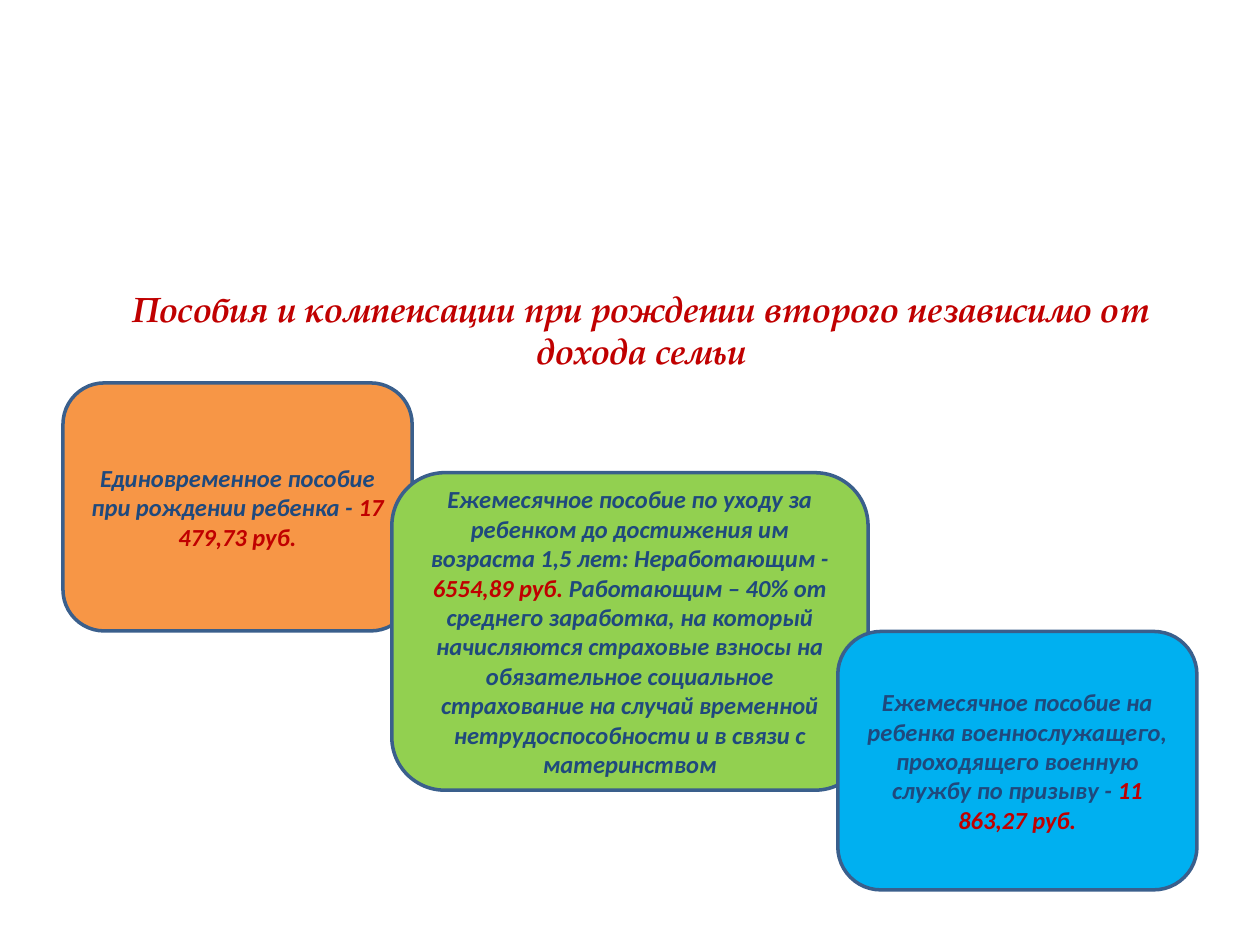
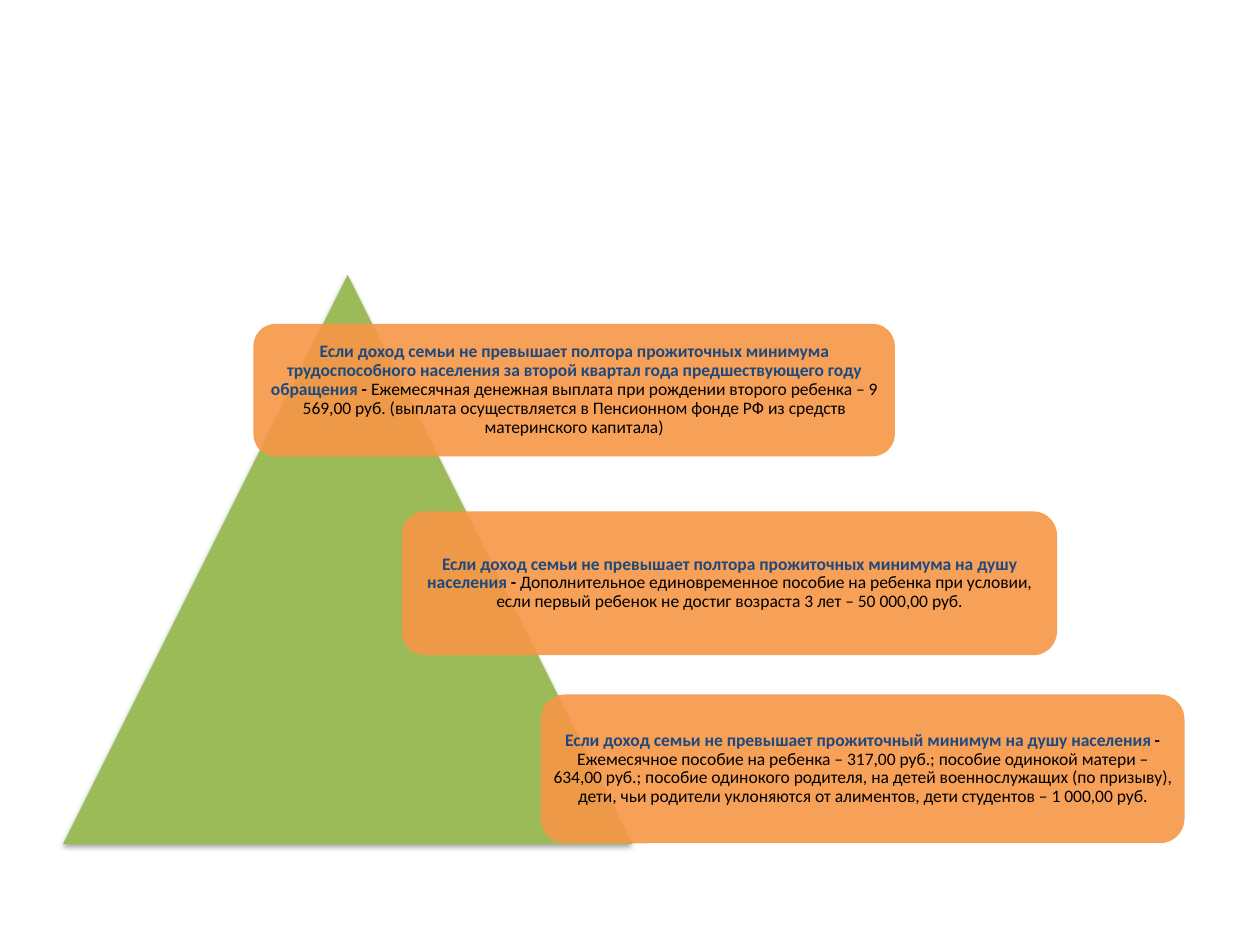
from dataclasses import dataclass

from lxml import etree
from pptx import Presentation
from pptx.dml.color import RGBColor
from pptx.enum.shapes import MSO_SHAPE
from pptx.enum.text import MSO_ANCHOR, PP_ALIGN
from pptx.oxml.ns import qn
from pptx.util import Cm, Pt

ROUND = MSO_SHAPE.ROUNDED_RECTANGLE
PEAK = MSO_SHAPE.ISOSCELES_TRIANGLE
MID = MSO_ANCHOR.MIDDLE
CENTER = PP_ALIGN.CENTER


@dataclass(frozen=True)
class Theme:
    navy: str = "1F497D"
    red: str = "C00000"
    black: str = "000000"
    edge: str = "3A5F8C"
    orange: str = "F79646"
    lime: str = "92D050"
    sky: str = "00B0F0"
    olive: str = "9BBB59"
    head: str = "TeX Gyre Pagella"
    body: str = "Calibri"
    title: int = 20
    box: int = 14
    card: int = 10


T = Theme()

# Content: places are left, top, width, height in cm
TITLE = "Пособия и компенсации при рождении второго независимо от дохода семьи"
TITLE_AT = (1.5, 5.54, 22.86, 2.21)

# Text parts alternate between label and sum
BOXES = [
    ((1.27, 7.72, 7.04, 5), T.orange, [
        "Единовременное пособие при рождении ребенка - ",
        "17 479,73 руб."]),
    ((7.9, 9.53, 9.6, 6.4), T.lime, [
        "Ежемесячное пособие по уходу за ребенком до достижения им "
        "возраста 1,5 лет: Неработающим - ",
        "6554,89 руб. ",
        "Работающим – 40% от среднего заработка, на который начисляются "
        "страховые взносы на обязательное социальное страхование на случай "
        "временной нетрудоспособности и в связи с материнством"]),
    ((16.89, 12.73, 7.24, 5.21), T.sky, [
        "Ежемесячное пособие на ребенка военнослужащего, проходящего "
        "военную службу по призыву - ",
        "11 863,27 руб."]),
]

PEAK_AT = (1.27, 5.54, 11.48, 11.48)

# Each card: place, income rule, benefit
CARDS = [
    ((5.11, 6.53, 12.93, 2.67),
     "Если доход семьи не превышает полтора прожиточных минимума "
     "трудоспособного населения за второй квартал года предшествующего "
     "году обращения",
     "Ежемесячная денежная выплата при рождении второго ребенка – "
     "9 569,00 руб. (выплата осуществляется в Пенсионном фонде РФ из "
     "средств материнского капитала)"),
    ((8.1, 10.31, 13.21, 2.9),
     "Если доход семьи не превышает полтора прожиточных минимума на душу "
     "населения",
     "Дополнительное единовременное пособие на ребенка при условии, если "
     "первый ребенок не достиг возраста 3 лет – 50 000,00 руб."),
    ((10.9, 14, 12.98, 3),
     "Если доход семьи не превышает прожиточный минимум на душу населения",
     "Ежемесячное пособие на ребенка – 317,00 руб.; пособие одинокой "
     "матери – 634,00 руб.; пособие одинокого родителя, на детей "
     "военнослужащих (по призыву), дети, чьи родители уклоняются от "
     "алиментов, дети студентов – 1 000,00 руб."),
]


# Helpers
def rgb(code):
    return RGBColor.from_string(code)


def add_block(slide, kind, at, fill, edge=None):
    shape = slide.shapes.add_shape(kind, *map(Cm, at))
    shape.shadow.inherit = False
    shape.fill.solid()
    shape.fill.fore_color.rgb = rgb(fill)
    if edge:
        shape.line.color.rgb = rgb(edge)
        shape.line.width = Pt(2)
    else:
        shape.line.fill.background()
    return shape


def write(shape, parts, size, face=T.body, slant=False):
    """Fill a shape with one centred paragraph of (text, colour, bold) runs."""
    frame = shape.text_frame
    frame.word_wrap = True
    frame.vertical_anchor = MID
    para = frame.paragraphs[0]
    para.alignment = CENTER
    for text, color, bold in parts:
        run = para.add_run()
        run.text = text
        font = run.font
        font.name, font.size = face, Pt(size)
        font.bold, font.italic = bold, slant
        font.color.rgb = rgb(color)
    return frame


def set_alpha(color, share):
    etree.SubElement(color, qn("a:alpha"), val=str(share * 1000))


def fade(shape, share):
    set_alpha(shape.element.spPr.find(".//" + qn("a:srgbClr")), share)


def cast(shape):
    """Give the shape a soft shadow straight below it."""
    effects = shape.element.spPr.find(qn("a:effectLst"))
    shade = etree.SubElement(
        effects, qn("a:outerShdw"), blurRad=str(Pt(3.1)), dist=str(Pt(1.8)),
        dir=str(90 * 60000), rotWithShape="0")
    set_alpha(etree.SubElement(shade, qn("a:srgbClr"), val=T.black), 35)


# Slides
def draw_boxes(slide):
    title = slide.shapes.add_textbox(*map(Cm, TITLE_AT))
    write(title, [(TITLE, T.red, True)], T.title, T.head, slant=True)
    for at, fill, texts in BOXES:
        box = add_block(slide, ROUND, at, fill, T.edge)
        parts = [(text, (T.navy, T.red)[i % 2], True)
                 for i, text in enumerate(texts)]
        write(box, parts, T.box, slant=True)


def draw_peak(slide):
    cast(add_block(slide, PEAK, PEAK_AT, T.olive))
    for at, rule, gain in CARDS:
        card = add_block(slide, ROUND, at, T.orange)
        fade(card, 90)
        parts = [(rule, T.navy, True), (" - ", T.black, True),
                 (gain, T.black, False)]
        frame = write(card, parts, T.card)
        frame.paragraphs[0].line_spacing = 0.9
        frame.margin_left = frame.margin_right = Cm(0.1)
        frame.margin_top = frame.margin_bottom = Cm(0.1)


def main():
    deck = Presentation()
    deck.slide_width, deck.slide_height = Cm(25.4), Cm(19.05)
    blank = deck.slide_layouts[6]
    for draw in (draw_boxes, draw_peak):
        draw(deck.slides.add_slide(blank))
    deck.save("out.pptx")


if __name__ == "__main__":
    main()
